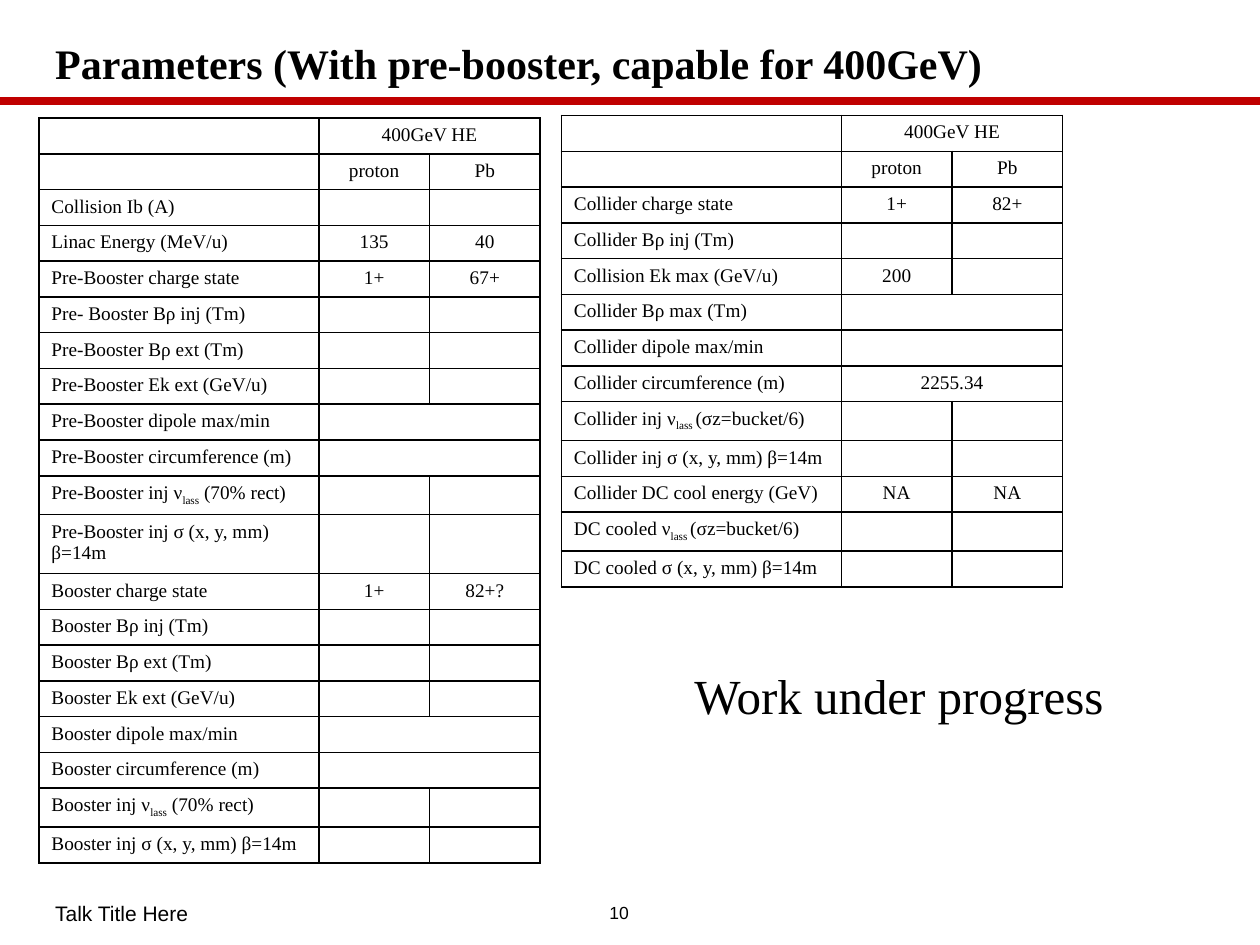
from lxml import etree
from pptx import Presentation
from pptx.dml.color import RGBColor
from pptx.enum.shapes import MSO_CONNECTOR
from pptx.enum.text import MSO_ANCHOR as Anchor, PP_ALIGN as Align
from pptx.oxml import parse_xml
from pptx.oxml.ns import nsdecls, qn
from pptx.util import Pt

SERIF, SANS = "Times New Roman", "Arial"
BLACK, RED = "000000", "C00000"
COLUMN_WIDTHS = (160, 63.25, 63.25)
ROW_HEIGHT = 20.2

# Two entries in a row mean that the value spans both beam columns.
HEADER_ROWS = [("", "400GeV HE"), ("", "proton", "Pb")]
BOOSTER_ROWS = HEADER_ROWS + [
    ("Collision Ib (A)", "", ""),
    ("Linac Energy (MeV/u)", "135", "40"),
    ("Pre-Booster charge state", "1+", "67+"),
    ("Pre- Booster Bρ inj (Tm)", "", ""),
    ("Pre-Booster Bρ ext (Tm)", "", ""),
    ("Pre-Booster Ek ext (GeV/u)", "", ""),
    ("Pre-Booster dipole max/min", ""),
    ("Pre-Booster circumference (m)", ""),
    ("Pre-Booster inj ν_lass_ (70% rect)", "", ""),
    ("Pre-Booster inj σ (x, y, mm) β=14m", "", ""),
    ("Booster charge state", "1+", "82+?"),
    ("Booster Bρ inj (Tm)", "", ""),
    ("Booster Bρ ext (Tm)", "", ""),
    ("Booster Ek ext (GeV/u)", "", ""),
    ("Booster dipole max/min", ""),
    ("Booster circumference (m)", ""),
    ("Booster inj ν_lass_ (70% rect)", "", ""),
    ("Booster inj σ (x, y, mm) β=14m", "", ""),
]
COLLIDER_ROWS = HEADER_ROWS + [
    ("Collider charge state", "1+", "82+"),
    ("Collider Bρ inj (Tm)", "", ""),
    ("Collision Ek max (GeV/u)", "200", ""),
    ("Collider Bρ max (Tm)", ""),
    ("Collider dipole max/min", ""),
    ("Collider circumference (m)", "2255.34"),
    ("Collider inj ν_lass _(σz=bucket/6)", "", ""),
    ("Collider inj σ (x, y, mm) β=14m", "", ""),
    ("Collider DC cool energy (GeV)", "NA", "NA"),
    ("DC cooled ν_lass _(σz=bucket/6)", "", ""),
    ("DC cooled σ (x, y, mm) β=14m", "", ""),
]


def color(hex_code):
    return RGBColor.from_string(hex_code)


def style_run(run, size, font, bold=False):
    run.font.size = Pt(size)
    run.font.name = font
    run.font.bold = bold
    run.font.color.rgb = color(BLACK)


def add_label(slide, box, text, size, font, bold=False, align=Align.LEFT,
              anchor=Anchor.MIDDLE, wrap=True):
    frame = slide.shapes.add_textbox(*map(Pt, box)).text_frame
    frame.word_wrap = wrap
    frame.vertical_anchor = anchor
    frame.text = text
    paragraph = frame.paragraphs[0]
    paragraph.alignment = align
    style_run(paragraph.runs[0], size, font, bold)
    return paragraph


def add_title(slide, box, text):
    add_label(slide, box, text, 24, SERIF, bold=True).line_spacing = 0.9


def add_rule(slide, left, right, y):
    rule = slide.shapes.add_connector(
        MSO_CONNECTOR.STRAIGHT, Pt(left), Pt(y), Pt(right), Pt(y))
    rule.line.color.rgb = color(RED)
    rule.line.width = Pt(4.5)
    etree.SubElement(rule._element.spPr, qn("a:effectLst"))


def add_borders(cell):
    properties = cell._tc.get_or_add_tcPr()
    for position, side in enumerate(("lnL", "lnR", "lnT", "lnB")):
        properties.insert(position, parse_xml(
            f'<a:{side} {nsdecls("a")} w="{Pt(1)}"><a:solidFill>'
            f'<a:srgbClr val="{BLACK}"/></a:solidFill></a:{side}>'))


def fill_cell(cell, text, align):
    """Write the text, lowering whatever stands between two underscores."""
    paragraph = cell.text_frame.paragraphs[0]
    paragraph.alignment = align
    for position, part in enumerate(text.split("_") if text else []):
        run = paragraph.add_run()
        run.text = part
        style_run(run, 11, SERIF)
        if position == 1:
            run.font._element.set("baseline", "-25000")
    if not text:  # keeps an empty cell as low as its row
        end = etree.SubElement(paragraph._p, qn("a:endParaRPr"))
        end.set("sz", "1100")


def add_parameter_table(slide, left, top, rows):
    table = slide.shapes.add_table(
        len(rows), len(COLUMN_WIDTHS), Pt(left), Pt(top),
        Pt(sum(COLUMN_WIDTHS)), Pt(ROW_HEIGHT * len(rows))).table
    table.first_row = table.horz_banding = False
    for column, width in zip(table.columns, COLUMN_WIDTHS):
        column.width = Pt(width)
    for r, entries in enumerate(rows):
        table.rows[r].height = Pt(ROW_HEIGHT)
        if len(entries) == 2:
            table.cell(r, 1).merge(table.cell(r, 2))
        for c in range(len(COLUMN_WIDTHS)):
            cell = table.cell(r, c)
            cell.fill.background()
            add_borders(cell)
            fill_cell(cell, entries[c] if c < len(entries) else "",
                      Align.CENTER if c else Align.LEFT)


def add_footer(slide, left, top, height):
    add_label(slide, (left, top, 308, height), "Talk Title Here", 12, SANS)
    add_label(slide, (left + 308, top, 42.5, height), "10", 10, SANS,
              align=Align.CENTER)


def main():
    deck = Presentation()
    deck.slide_width, deck.slide_height = Pt(720), Pt(540)
    slide = deck.slides.add_slide(deck.slide_layouts[6])

    add_rule(slide, -0.7, 720, 57.6)
    add_title(slide, (24.5, 18.7, 666.7, 38.2),
              "Parameters (With pre-booster, capable for 400GeV)")
    add_parameter_table(slide, 22.2, 67.5, BOOSTER_ROWS)
    add_footer(slide, 24.5, 509.5, 24)
    add_parameter_table(slide, 320.8, 66, COLLIDER_ROWS)
    add_label(slide, (389.7, 376.6, 251.3, 41), "Work under progress", 28,
              SERIF, anchor=Anchor.TOP, wrap=False)
    deck.save("out.pptx")


if __name__ == "__main__":
    main()
